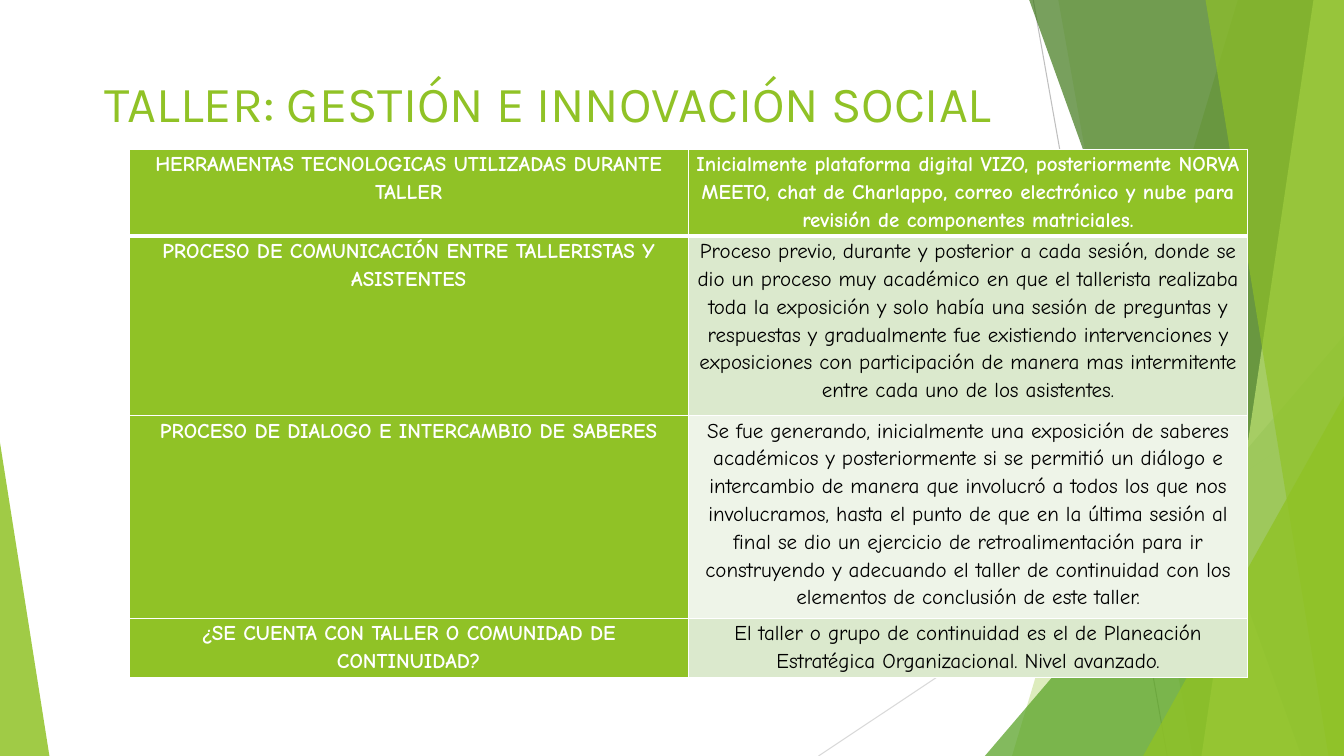
import dataclasses

import lxml.etree
import pptx
import pptx.dml.color
import pptx.enum.shapes
import pptx.enum.text
import pptx.oxml
import pptx.oxml.ns
import pptx.util


@dataclasses.dataclass(frozen=True)
class Theme:
    """Colours, fonts and type sizes of the slide."""
    green: str = "90C226"
    leaf: str = "54A021"
    forest: str = "3F7819"
    lime: str = "C0E474"
    band: str = "DBE9CD"
    pale_band: str = "EEF4E8"
    white: str = "FFFFFF"
    black: str = "000000"
    ray: str = "BFBFBF"
    pale_ray: str = "D9D9D9"
    title_font: str = "Karla"
    table_font: str = "Comic Neue"
    title_size: int = 36
    table_size: int = 15
    ray_width: float = 0.75


THEME = Theme()
WIDTH = pptx.util.Inches(13.333)
HEIGHT = pptx.util.Inches(7.5)

RAYS = [
    ((76.88, 0), (86.85, 100), THEME.ray),
    ((100, 53.73), (60.9, 100), THEME.pale_ray),
]
BACK_BANDS = [
    (92.1, 75.3, THEME.green, 30),
    (78.75, 88.73, THEME.green, 20),
]
FRONT_BANDS = [
    (76.58, 96.83, THEME.forest, 70),
    (97.73, 89.4, THEME.lime, 70),
    (89.7, 98.85, THEME.green, 65),
]
TITLE = "TALLER: GESTIÓN E INNOVACIÓN SOCIAL"
TOPICS = [
    (10.53, THEME.green, "HERRAMENTAS TECNOLOGICAS UTILIZADAS DURANTE TALLER",
     "Inicialmente plataforma digital VIZO, posteriormente NORVA MEETO, chat de "
     "Charlappo, correo electrónico y nube para revisión de componentes matriciales."),
    (23.73, THEME.band, "PROCESO DE COMUNICACIÓN ENTRE TALLERISTAS Y ASISTENTES",
     "Proceso previo, durante y posterior a cada sesión, donde se dio un proceso muy "
     "académico en que el tallerista realizaba toda la exposición y solo había una sesión "
     "de preguntas y respuestas y gradualmente fue existiendo intervenciones y exposiciones "
     "con participación de manera mas intermitente entre cada uno de los asistentes."),
    (26.27, THEME.pale_band, "PROCESO DE DIALOGO E INTERCAMBIO DE SABERES",
     "Se fue generando, inicialmente una exposición de saberes académicos y posteriormente "
     "si se permitió un diálogo e intercambio de manera que involucró a todos los que nos "
     "involucramos, hasta el punto de que en la última sesión al final se dio un ejercicio "
     "de retroalimentación para ir construyendo y adecuando el taller de continuidad con "
     "los elementos de conclusión de este taller."),
    (7.87, THEME.band, "¿SE CUENTA CON TALLER O COMUNIDAD DE CONTINUIDAD?",
     "El taller o grupo de continuidad es el de Planeación Estratégica Organizacional. "
     "Nivel avanzado."),
]


def across(percent):
    """Return a percentage of the slide's width."""
    return round(WIDTH * percent / 100)


def down(percent):
    """Return a percentage of the slide's height."""
    return round(HEIGHT * percent / 100)


def rgb(color):
    """Return a colour object for a hex string."""
    return pptx.dml.color.RGBColor.from_string(color)


def apply_format(target, values):
    """Set each attribute of the target from a dict."""
    for attribute, value in values.items():
        setattr(target, attribute, value)


def paint(facet, color, opacity):
    """Give a facet a translucent fill without line or shadow."""
    facet.shadow.inherit = False
    facet.fill.solid()
    facet.fill.fore_color.rgb = rgb(color)
    facet.line.fill.background()
    tint = facet.fill._xPr.find(".//" + pptx.oxml.ns.qn("a:srgbClr"))
    alpha = lxml.etree.SubElement(tint, pptx.oxml.ns.qn("a:alpha"))
    alpha.set("val", str(opacity * 1000))


def add_ray(slide, start, end, color):
    """Draw a thin line between two points."""
    ray = slide.shapes.add_connector(
        pptx.enum.shapes.MSO_CONNECTOR.STRAIGHT,
        across(start[0]), down(start[1]), across(end[0]), down(end[1]))
    ray.line.color.rgb = rgb(color)
    ray.line.width = pptx.util.Pt(THEME.ray_width)
    lxml.etree.SubElement(ray._element.spPr, pptx.oxml.ns.qn("a:effectLst"))


def add_band(slide, top, bottom, color, opacity):
    """Draw a full-height facet from a slanted edge to the right side."""
    outline = slide.shapes.build_freeform(across(top), 0)
    outline.add_line_segments(
        [(WIDTH, 0), (WIDTH, HEIGHT), (across(bottom), HEIGHT)], close=True)
    paint(outline.convert_to_shape(), color, opacity)


def add_corner(slide, left, top, width, apex, color, opacity):
    """Draw a triangle that stands on the slide's lower edge."""
    corner = slide.shapes.add_shape(
        pptx.enum.shapes.MSO_SHAPE.ISOSCELES_TRIANGLE,
        across(left), down(top), across(width), down(100 - top))
    corner.adjustments[0] = apex
    paint(corner, color, opacity)


def write(frame, text, font, size, color, bold=False, spacing=None):
    """Write one centred paragraph in a text frame."""
    paragraph = frame.paragraphs[0]
    apply_format(paragraph, {"alignment": pptx.enum.text.PP_ALIGN.CENTER,
                             "line_spacing": spacing})
    run = paragraph.add_run()
    run.text = text
    apply_format(run.font, {"name": font, "size": pptx.util.Pt(size), "bold": bold})
    run.font.color.rgb = rgb(color)


def add_title(slide):
    """Add the heading of the slide."""
    heading = slide.shapes.add_textbox(across(5.55), down(8.93), across(70.5), down(19.2))
    apply_format(heading.text_frame, {
        "word_wrap": True, "vertical_anchor": pptx.enum.text.MSO_ANCHOR.TOP})
    write(heading.text_frame, TITLE, THEME.title_font, THEME.title_size, THEME.green)


def add_borders(cell, widths):
    """Give a cell white borders, in points by side."""
    for side, width in widths.items():
        border = lxml.etree.SubElement(
            cell._tc.get_or_add_tcPr(), pptx.oxml.ns.qn("a:ln" + side),
            w=str(pptx.util.Pt(width)))
        fill = lxml.etree.SubElement(border, pptx.oxml.ns.qn("a:solidFill"))
        lxml.etree.SubElement(fill, pptx.oxml.ns.qn("a:srgbClr"), val=THEME.white)


def fill_cell(cell, text, background, strong, borders):
    """Format a table cell and write its text."""
    apply_format(cell, {"margin_left": across(0.53), "margin_right": across(0.53),
                        "margin_top": 0, "margin_bottom": 0})
    add_borders(cell, borders)
    cell.fill.solid()
    cell.fill.fore_color.rgb = rgb(background)
    write(cell.text_frame, text, THEME.table_font, THEME.table_size,
          THEME.white if strong else THEME.black, strong, 1.15)


def add_topics(slide):
    """Add the table of workshop topics."""
    height = sum(topic[0] for topic in TOPICS)
    table = slide.shapes.add_table(
        len(TOPICS), 2, across(9.6), down(19.73), across(83.25), down(height)).table
    apply_format(table, {"first_row": False, "horz_banding": False})
    for index, (share, background, topic, answer) in enumerate(TOPICS):
        table.rows[index].height = down(share)
        borders = {"L": 1, "R": 1, "T": 3 if index == 1 else 1, "B": 3 if index == 0 else 1}
        fill_cell(table.cell(index, 0), topic, THEME.green, True, borders)
        fill_cell(table.cell(index, 1), answer, background, index == 0, borders)


def main():
    """Build the slide and save it."""
    deck = pptx.Presentation()
    apply_format(deck, {"slide_width": WIDTH, "slide_height": HEIGHT})
    slide = deck.slides.add_slide(deck.slide_layouts[6])
    for ray in RAYS:
        add_ray(slide, *ray)
    for band in BACK_BANDS:
        add_band(slide, *band)
    add_corner(slide, 73.28, 44.4, 26.72, 1, THEME.leaf, 72)
    for band in FRONT_BANDS:
        add_band(slide, *band)
    add_corner(slide, 85.05, 52.4, 14.95, 1, THEME.green, 80)
    add_corner(slide, 0, 58.53, 3.68, 0, THEME.green, 85)
    add_title(slide)
    add_topics(slide)
    deck.save("out.pptx")


if __name__ == "__main__":
    main()
